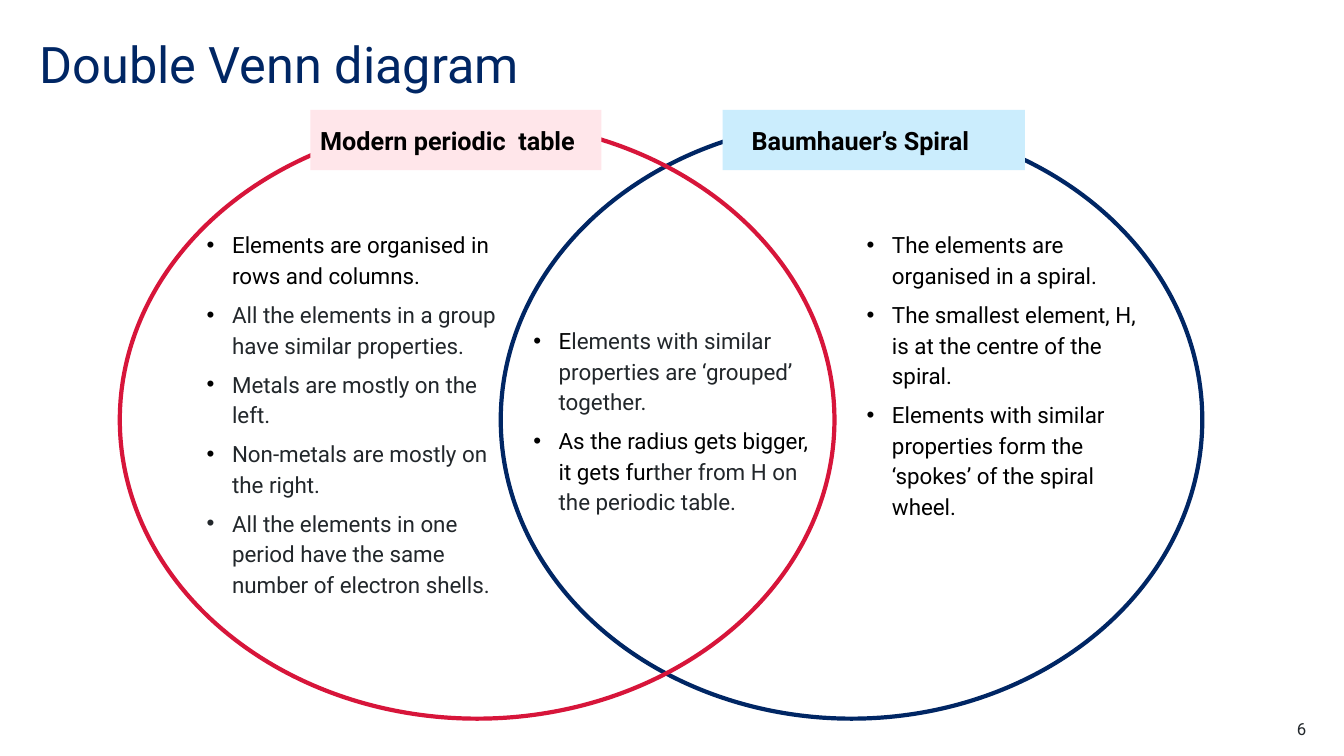
import pptx
import pptx.util
import pptx.dml.color
import pptx.enum.shapes
import pptx.enum.text
import lxml.etree

Cm, Pt = pptx.util.Cm, pptx.util.Pt
RGB = pptx.dml.color.RGBColor
SHAPE = pptx.enum.shapes.MSO_SHAPE
ALIGN = pptx.enum.text.PP_ALIGN
ANCHOR = pptx.enum.text.MSO_ANCHOR

NAVY = RGB(0x00, 0x26, 0x64)
RED = RGB(0xD7, 0x15, 0x3A)
PINK = RGB(0xFF, 0xE6, 0xEA)
SKY = RGB(0xCB, 0xED, 0xFD)
BLACK = RGB(0, 0, 0)
INK = RGB(0x22, 0x27, 0x2B)


class Deck:
    face = "Roboto"
    indent = Cm(0.64)

    def __init__(self, width, height):
        self.prs = pptx.Presentation()
        self.prs.slide_width, self.prs.slide_height = Cm(width), Cm(height)
        self.slide = self.prs.slides.add_slide(self.prs.slide_layouts[6])

    def style(self, para, size, color=None, bold=False):
        font = para.font
        font.name, font.size, font.bold = self.face, Pt(size), bold
        if color is not None:
            font.color.rgb = color

    def frame(self, *box):
        frame = self.slide.shapes.add_textbox(*map(Cm, box)).text_frame
        frame.word_wrap = True
        frame.margin_left = frame.margin_right = 0
        frame.margin_top = frame.margin_bottom = 0
        return frame

    def text(self, box, words, size, color, align=ALIGN.LEFT, space=1.0):
        para = self.frame(*box).paragraphs[0]
        para.text, para.alignment, para.line_spacing = words, align, space
        self.style(para, size, color)

    def shape(self, kind, box):
        shape = self.slide.shapes.add_shape(kind, *map(Cm, box))
        shape.shadow.inherit = False
        return shape

    def ring(self, box, color):
        ring = self.shape(SHAPE.OVAL, box)
        ring.fill.background()
        ring.line.color.rgb = color
        ring.line.width = Pt(3)

    def label(self, box, words, fill, indent=0):
        label = self.shape(SHAPE.RECTANGLE, box)
        label.fill.solid()
        label.fill.fore_color.rgb = fill
        label.line.fill.background()
        frame = label.text_frame
        frame.word_wrap, frame.vertical_anchor = True, ANCHOR.MIDDLE
        para = frame.paragraphs[0]
        para.text, para.alignment = words, ALIGN.LEFT
        para._p.get_or_add_pPr().set("marL", str(Cm(indent)))
        self.style(para, 18, BLACK, True)

    def bullet(self, para, color):
        props = para._p.get_or_add_pPr()
        props.set("marL", str(self.indent))
        props.set("indent", str(-self.indent))
        tag = "{%s}" % props.nsmap["a"]
        tint = lxml.etree.SubElement(props, tag + "buClr")
        lxml.etree.SubElement(tint, tag + "srgbClr", val=str(color))
        lxml.etree.SubElement(props, tag + "buFont", typeface="Arial")
        lxml.etree.SubElement(props, tag + "buChar", char="•")

    def points(self, box, items):
        """Each item is a bullet colour followed by (text, colour) runs."""
        frame = self.frame(*box)
        for i, (dot, *runs) in enumerate(items):
            para = frame.add_paragraph() if i else frame.paragraphs[0]
            self.bullet(para, dot)
            para.line_spacing, para.space_after = 1.14, Pt(6)
            self.style(para, 16, runs[0][1] if len(runs) == 1 else None)
            for words, color in runs:
                run = para.add_run()
                run.text = words
                if len(runs) > 1:
                    run.font.color.rgb = color


def main():
    deck = Deck(33.87, 19.05)

    # Title
    deck.text((1, 1, 28, 1.52), "Double Venn diagram", 36, NAVY, space=0.9)

    # Circles and their labels
    deck.ring((12.62, 3.05, 17.68, 15.06), NAVY)
    deck.ring((3.02, 3.05, 18.01, 15.06), RED)
    deck.label((7.82, 2.77, 7.34, 1.52), "Modern periodic  table", PINK)
    deck.label((18.21, 2.77, 7.62, 1.52), "Baumhauer’s Spiral", SKY, 0.48)

    # Modern table only
    deck.points((5.21, 5.74, 7.62, 9.8), [
        (BLACK, ("Elements are organised in rows and columns.", BLACK)),
        (BLACK, ("All the elements in a group have similar properties.", INK)),
        (BLACK, ("Metals are mostly on the left.", INK)),
        (BLACK, ("Non-metals are mostly on the right.", INK)),
        (INK, ("All the elements in one period have the same number of "
               "electron shells.", INK)),
    ])

    # Shared by both
    deck.points((13.44, 8.15, 7.34, 8.69), [
        (BLACK, ("E", BLACK),
         ("lements with similar properties are ‘grouped’ together.", INK)),
        (BLACK, ("As the radius gets bigger, it gets fur", BLACK),
         ("ther from H on the periodic table.", INK)),
    ])

    # Spiral only
    deck.points((21.84, 5.74, 7.34, 8.69), [
        (BLACK, (words, BLACK)) for words in (
            "The elements are organised in a spiral.",
            "The smallest element, H, is at the centre of the spiral.",
            "Elements with similar properties form the ‘spokes’ of the "
            "spiral wheel.",
        )
    ])

    # Page number
    deck.text((30.91, 18.11, 2.01, 0.51), "6", 12, INK, ALIGN.RIGHT)

    deck.prs.save("out.pptx")


if __name__ == "__main__":
    main()
